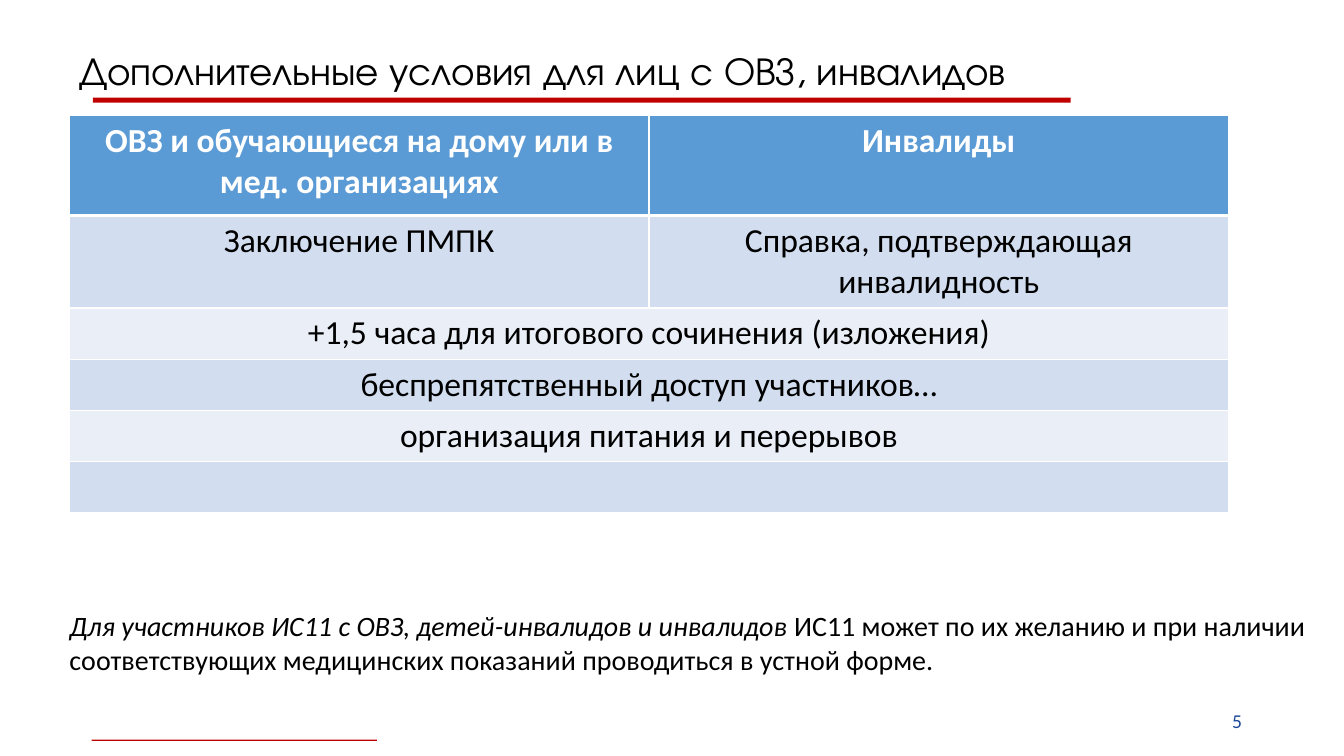
"""Build the slide on extra conditions for disabled participants."""
import dataclasses

import pptx
import pptx.dml.color
import pptx.enum.shapes
import pptx.enum.text
import pptx.oxml
import pptx.oxml.ns
import pptx.util

Cm = pptx.util.Cm
Align = pptx.enum.text.PP_ALIGN
Anchor = pptx.enum.text.MSO_ANCHOR


@dataclasses.dataclass(frozen=True)
class Theme:
    red: str = "C00000"
    blue: str = "5B9BD5"
    navy: str = "1D4999"
    white: str = "FFFFFF"
    black: str = "000000"
    bands: tuple = ("D2DEEF", "EAEFF7")
    body: str = "Calibri"
    head: str = "TeX Gyre Adventor"
    title: int = 28
    cell: int = 24
    note: int = 20
    page: int = 14


theme = Theme()

HEADS = ("ОВЗ и обучающиеся на дому или в мед. организациях", "Инвалиды")
PROOFS = ("Заключение ПМПК", "Справка, подтверждающая инвалидность")
SHARED = (
    "+1,5 часа для итогового сочинения (изложения)",
    "беспрепятственный доступ участников…",
    "организация питания и перерывов",
    "",
)


def rgb(code):
    return pptx.dml.color.RGBColor.from_string(code)


def apply(target, form):
    for name, value in form.items():
        setattr(target, name, value)


def add_run(para, text, size, color=theme.black, face=theme.body, **form):
    run = para.add_run()
    run.text = text
    apply(run.font, {"name": face, "size": pptx.util.Pt(size), **form})
    run.font.color.rgb = rgb(color)


def add_bar(slide, *place):
    bar = slide.shapes.add_shape(
        pptx.enum.shapes.MSO_SHAPE.RECTANGLE, *map(Cm, place))
    bar.shadow.inherit = False
    bar.fill.solid()
    bar.fill.fore_color.rgb = rgb(theme.red)
    bar.line.fill.background()


def add_box(slide, place, **form):
    frame = slide.shapes.add_textbox(*map(Cm, place)).text_frame
    apply(frame, {"word_wrap": True, **form})
    return frame.paragraphs[0]


def add_edges(cell, widths):
    props = cell._tc.get_or_add_tcPr()
    for index, (side, width) in enumerate(widths.items()):
        edge = pptx.oxml.parse_xml(
            f'<a:ln{side} {pptx.oxml.ns.nsdecls("a")} w="{pptx.util.Pt(width)}">'
            f'<a:solidFill><a:srgbClr val="{theme.white}"/></a:solidFill>'
            f'</a:ln{side}>')
        props.insert(index, edge)


def fill_cell(cell, text, row):
    top = row == 0
    cell.fill.solid()
    cell.fill.fore_color.rgb = rgb(
        theme.blue if top else theme.bands[(row - 1) % 2])
    add_edges(cell, {"L": 1, "R": 1, "T": 3 if row == 1 else 1,
                     "B": 3 if top else 1})
    if text:
        para = cell.text_frame.paragraphs[0]
        para.alignment = Align.CENTER
        add_run(para, text, theme.cell,
                theme.white if top else theme.black, bold=top)


def add_grid(slide):
    rows = [HEADS, PROOFS] + [(text, "") for text in SHARED]
    highs = [2.51, 2.33] + [1.29] * len(SHARED)
    place = (1.75, 2.92, 29.21, sum(highs))
    grid = slide.shapes.add_table(len(rows), 2, *map(Cm, place)).table
    for row, (texts, high) in enumerate(zip(rows, highs)):
        grid.rows[row].height = Cm(high)
        for col, text in enumerate(texts):
            fill_cell(grid.cell(row, col), text, row)
        if row > 1:
            grid.cell(row, 0).merge(grid.cell(row, 1))


def add_title(slide):
    para = add_box(slide, (1.75, 0.36, 29.21, 2.01),
                   vertical_anchor=Anchor.BOTTOM, margin_bottom=0)
    para.line_spacing = 0.9
    add_run(para, "Дополнительные условия для лиц с ОВЗ, инвалидов",
            theme.title, face=theme.head)


def add_note(slide):
    para = add_box(slide, (1.5, 15.21, 31.95, 1.96))
    add_run(para, "Для участников ИС11 с ОВЗ, детей-инвалидов и инвалидов",
            theme.note, italic=True)
    add_run(para, " ИС11 может по их желанию и при наличии соответствующих "
            "медицинских показаний проводиться в устной форме.", theme.note)


def add_page(slide):
    para = add_box(slide, (23.93, 17.65, 7.62, 1.02),
                   vertical_anchor=Anchor.MIDDLE)
    para.alignment = Align.RIGHT
    add_run(para, "5", theme.page, theme.navy)


def main():
    deck = pptx.Presentation()
    apply(deck, {"slide_width": Cm(33.87), "slide_height": Cm(19.05)})
    slide = deck.slides.add_slide(deck.slide_layouts[6])
    add_bar(slide, 2.34, 2.46, 24.64, 0.13)
    add_bar(slide, 2.31, 18.64, 7.19, 0.03)
    add_page(slide)
    add_grid(slide)
    add_title(slide)
    add_note(slide)
    deck.save("out.pptx")


if __name__ == "__main__":
    main()
